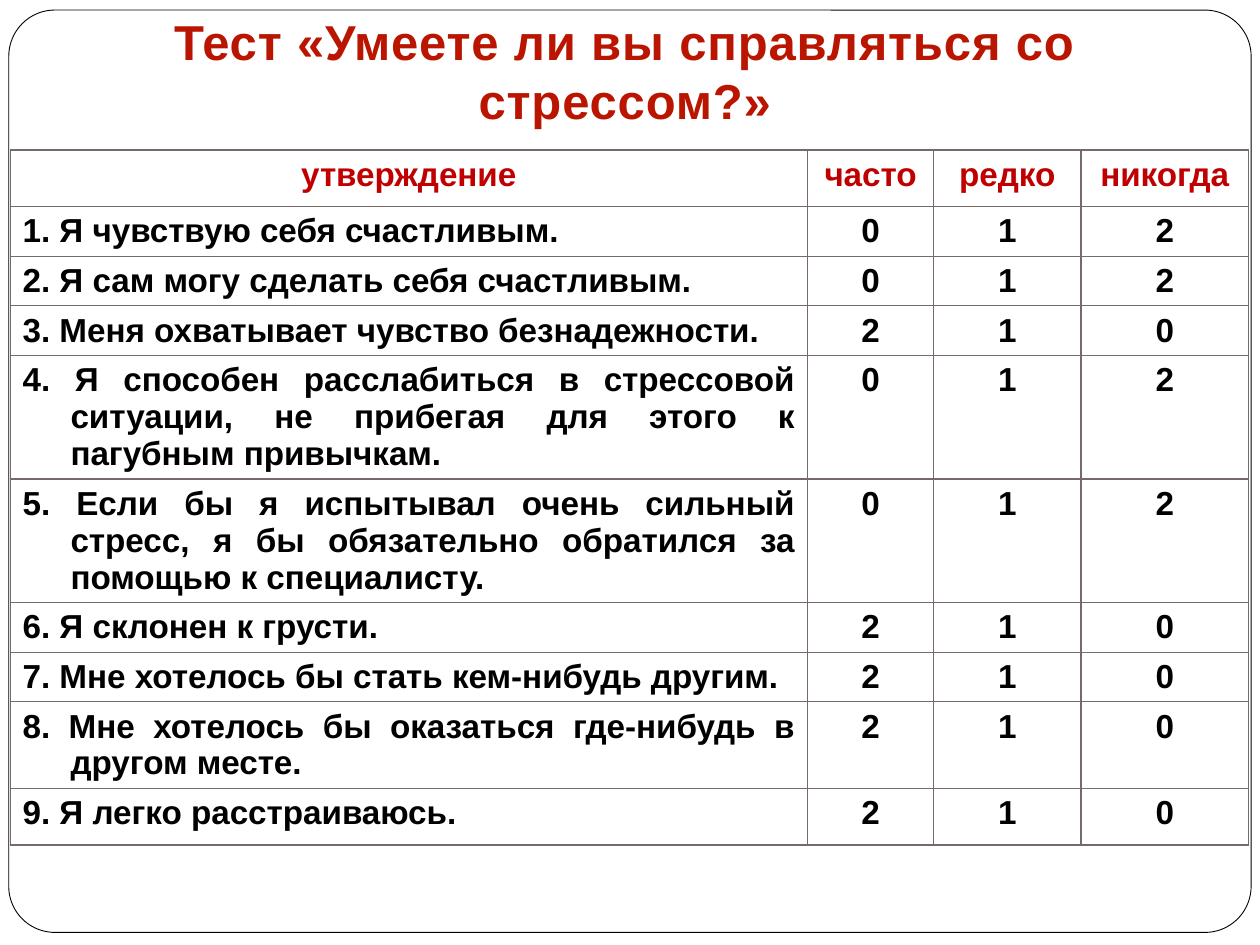
from pptx import Presentation
from pptx.dml.color import RGBColor
from pptx.enum.shapes import MSO_SHAPE as Shape
from pptx.enum.text import MSO_ANCHOR as Anchor, PP_ALIGN as Align
from pptx.oxml import parse_xml
from pptx.oxml.ns import nsdecls
from pptx.util import Inches, Pt

COLORS = {"title": "BA1500", "header": "C00000", "text": "000000",
          "paper": "FFFFFF", "grid": "75696A"}
HEADER = ("утверждение", "часто", "редко", "никогда")
STATEMENTS = [
    ("Я чувствую себя счастливым.", 0, 1),
    ("Я сам могу сделать себя счастливым.", 0, 1),
    ("Меня охватывает чувство безнадежности.", 2, 1),
    ("Я способен расслабиться в стрессовой ситуации, не прибегая "
     "для этого к пагубным привычкам.", 0, 3),
    ("Если бы я испытывал очень сильный стресс, я бы обязательно "
     "обратился за помощью к специалисту.", 0, 3),
    ("Я склонен к грусти.", 2, 1),
    ("Мне хотелось бы стать кем-нибудь другим.", 2, 1),
    ("Мне хотелось бы оказаться где-нибудь в другом месте.", 2, 2),
    ("Я легко расстраиваюсь.", 2, 1),
]
COLUMN_WIDTHS = (6.33, 1, 1.17, 1.33)
EDGE_ROW_HEIGHT = 0.45


class SlideBuilder:
    """Holds the style and the current slide, and adds each kind of element."""

    font_name = "Arial"

    def __init__(self, slide):
        self.slide = slide

    def color(self, name):
        return RGBColor.from_string(COLORS[name])

    def style(self, paragraph, size, color, align):
        paragraph.alignment = align
        for run in paragraph.runs:
            run.font.name = self.font_name
            run.font.size = Pt(size)
            run.font.bold = True
            run.font.color.rgb = self.color(color)

    def frame(self, left, top, width, height):
        border = self.slide.shapes.add_shape(
            Shape.ROUNDED_RECTANGLE, Inches(left), Inches(top),
            Inches(width), Inches(height))
        border.adjustments[0] = 0.05
        border.shadow.inherit = False
        border.fill.solid()
        border.fill.fore_color.rgb = self.color("paper")
        border.line.color.rgb = self.color("text")
        border.line.width = Pt(0.5)
        self.slide.shapes._spTree.insert(2, border._element)

    def title(self, text, left, top, width, height):
        title = self.slide.shapes.title
        title.left, title.top = Inches(left), Inches(top)
        title.width, title.height = Inches(width), Inches(height)
        title.text_frame.text = text
        title.text_frame.word_wrap = True
        title.text_frame.vertical_anchor = Anchor.MIDDLE
        heading = title.text_frame.paragraphs[0]
        self.style(heading, 28, "title", Align.CENTER)
        heading.runs[0].font._element.set("spc", "50")

    def cell(self, cell, text, color, align):
        cell.text_frame.text = text
        paragraph = cell.text_frame.paragraphs[0]
        self.style(paragraph, 19, color, align)
        indents = paragraph._p.get_or_add_pPr()
        indents.set("marL", str(Inches(0.38)))
        indents.set("indent", str(Inches(-0.38)))
        properties = cell._tc.get_or_add_tcPr()
        for side in ("lnL", "lnR", "lnT", "lnB"):
            properties.append(parse_xml(
                f'<a:{side} {nsdecls("a")} w="{Pt(0.75)}"><a:solidFill>'
                f'<a:srgbClr val="{COLORS["grid"]}"/></a:solidFill></a:{side}>'))
        cell.fill.background()

    def table(self, rows, heights, left, top):
        table = self.slide.shapes.add_table(
            len(rows), len(COLUMN_WIDTHS), Inches(left), Inches(top),
            Inches(sum(COLUMN_WIDTHS)), Inches(sum(heights))).table
        table.horz_banding = False
        for column, width in zip(table.columns, COLUMN_WIDTHS):
            column.width = Inches(width)
        for r, (row, height) in enumerate(zip(rows, heights)):
            table.rows[r].height = Inches(height)
            for c, text in enumerate(row):
                is_statement = r > 0 and c == 0
                self.cell(table.cell(r, c), text,
                          "text" if r else "header",
                          Align.JUSTIFY if is_statement else Align.CENTER)


def main():
    presentation = Presentation()
    presentation.slide_width, presentation.slide_height = Inches(10), Inches(7.5)
    builder = SlideBuilder(
        presentation.slides.add_slide(presentation.slide_layouts[5]))
    builder.frame(0.07, 0.08, 9.86, 7.32)
    builder.title("Тест «Умеете ли вы справляться со стрессом?»",
                  0.25, 0.04, 9.42, 1.04)
    rows = [HEADER] + [
        (f"{number}. {statement}", str(often), "1", str(2 - often))
        for number, (statement, often, _) in enumerate(STATEMENTS, 1)]
    heights = [0.1 + 0.29 * lines for _, _, lines in STATEMENTS[:-1]]
    builder.table(rows, [EDGE_ROW_HEIGHT, *heights, EDGE_ROW_HEIGHT], 0.08, 1.19)
    presentation.save("out.pptx")


if __name__ == "__main__":
    main()
